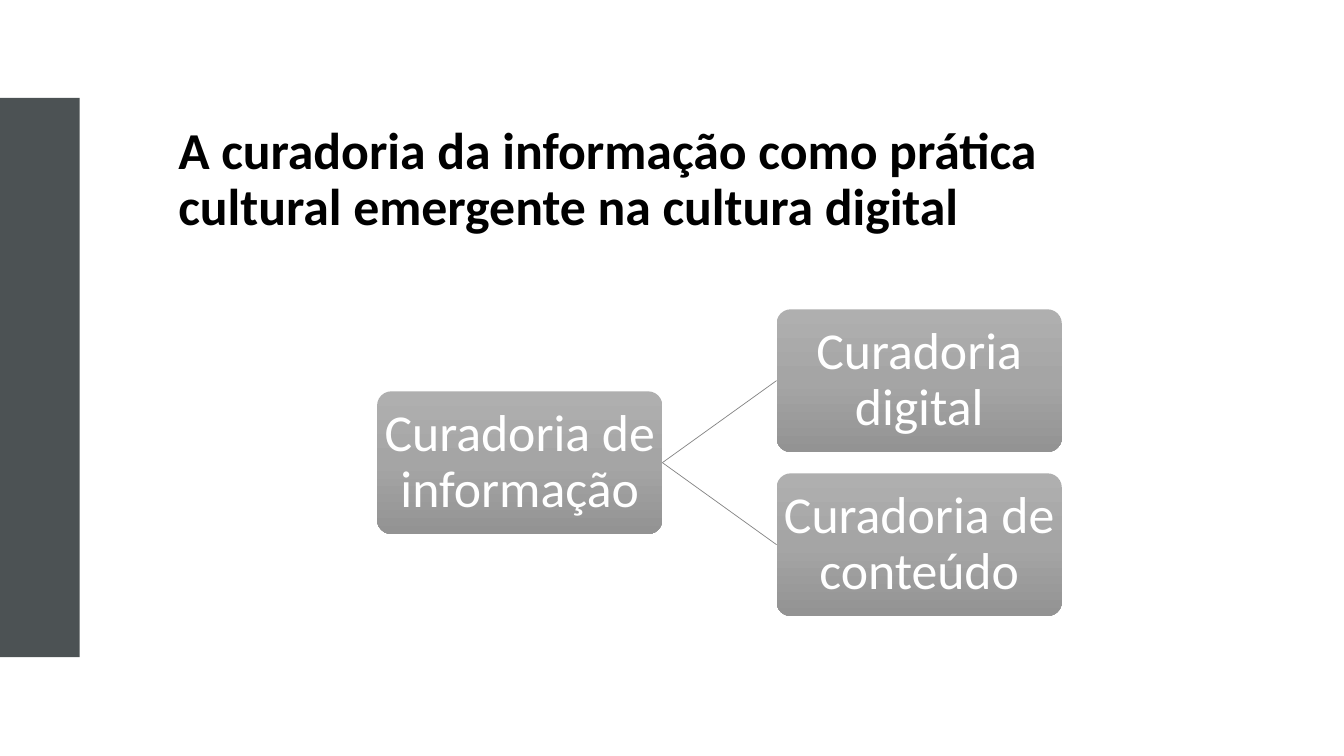
from copy import deepcopy

from lxml.etree import SubElement
from pptx import Presentation
from pptx.dml.color import RGBColor
from pptx.enum.shapes import MSO_CONNECTOR, MSO_SHAPE
from pptx.enum.text import MSO_ANCHOR, PP_ALIGN
from pptx.oxml.ns import qn
from pptx.util import Inches, Pt

SLATE = RGBColor(0x4C, 0x52, 0x54)
BLACK = RGBColor(0x00, 0x00, 0x00)
WHITE = RGBColor(0xFF, 0xFF, 0xFF)
LIGHT_GRAY = RGBColor(0xAF, 0xAF, 0xAF)
MID_GRAY = RGBColor(0xA5, 0xA5, 0xA5)
DARK_GRAY = RGBColor(0x93, 0x93, 0x93)
LINE_GRAY = RGBColor(0x84, 0x84, 0x84)

BOX_WIDTH = Inches(2.83)
BOX_HEIGHT = BOX_WIDTH // 2
COLUMN_STEP = int(BOX_WIDTH * 1.4)
ROW_STEP = int(BOX_HEIGHT * 1.15)
TREE_LEFT = Inches(3.74)
TREE_MIDDLE = Inches(4.59)


def write_text(shape, text, color, alignment, bold=False):
    frame = shape.text_frame
    frame.word_wrap = True
    frame.vertical_anchor = MSO_ANCHOR.MIDDLE
    paragraph = frame.paragraphs[0]
    paragraph.text = text
    paragraph.alignment = alignment
    paragraph.line_spacing = 0.9
    paragraph.font.name = "Calibri"
    paragraph.font.size = Pt(37)
    paragraph.font.bold = bold
    paragraph.font.color.rgb = color


def add_box(slide, text, column, row):
    """Add a tree box; rows count from the middle of the tree."""
    top = TREE_MIDDLE - BOX_HEIGHT // 2 + int(row * ROW_STEP)
    box = slide.shapes.add_shape(
        MSO_SHAPE.ROUNDED_RECTANGLE,
        TREE_LEFT + column * COLUMN_STEP, top, BOX_WIDTH, BOX_HEIGHT)
    box.adjustments[0] = 0.1
    box.shadow.inherit = False
    box.line.fill.background()
    box.fill.gradient()
    box.fill.gradient_angle = 270
    first = box._element.spPr.find(".//" + qn("a:gs"))
    first.addnext(deepcopy(first))
    colors = (LIGHT_GRAY, MID_GRAY, DARK_GRAY)
    for stop, position, color in zip(box.fill.gradient_stops, (0, 0.5, 1), colors):
        stop.position = position
        stop.color.rgb = color
    frame = box.text_frame
    frame.margin_left = frame.margin_right = 0
    frame.margin_top = frame.margin_bottom = 0
    write_text(box, text, WHITE, PP_ALIGN.CENTER)
    return box


presentation = Presentation()
presentation.slide_width = Inches(13.33)
presentation.slide_height = Inches(7.5)
slide = presentation.slides.add_slide(presentation.slide_layouts[6])

side_bar = slide.shapes.add_shape(
    MSO_SHAPE.RECTANGLE, 0, Inches(0.97), Inches(0.79), Inches(5.55))
side_bar.shadow.inherit = False
side_bar.fill.solid()
side_bar.fill.fore_color.rgb = SLATE
side_bar.line.fill.background()

title = slide.shapes.add_textbox(
    Inches(1.67), Inches(1.15), Inches(10.35), Inches(1.29))
write_text(
    title,
    "A curadoria da informação como prática cultural emergente na cultura digital",
    BLACK, PP_ALIGN.LEFT, bold=True)

root = add_box(slide, "Curadoria de informação", 0, 0)
for text, row in (("Curadoria digital", -0.5), ("Curadoria de conteúdo", 0.5)):
    branch = add_box(slide, text, 1, row)
    connector = slide.shapes.add_connector(MSO_CONNECTOR.STRAIGHT, 0, 0, 0, 0)
    connector.begin_connect(root, 3)
    connector.end_connect(branch, 1)
    connector.line.color.rgb = LINE_GRAY
    connector.line.width = Pt(0.5)
    SubElement(connector._element.spPr, qn("a:effectLst"))

presentation.save("out.pptx")
